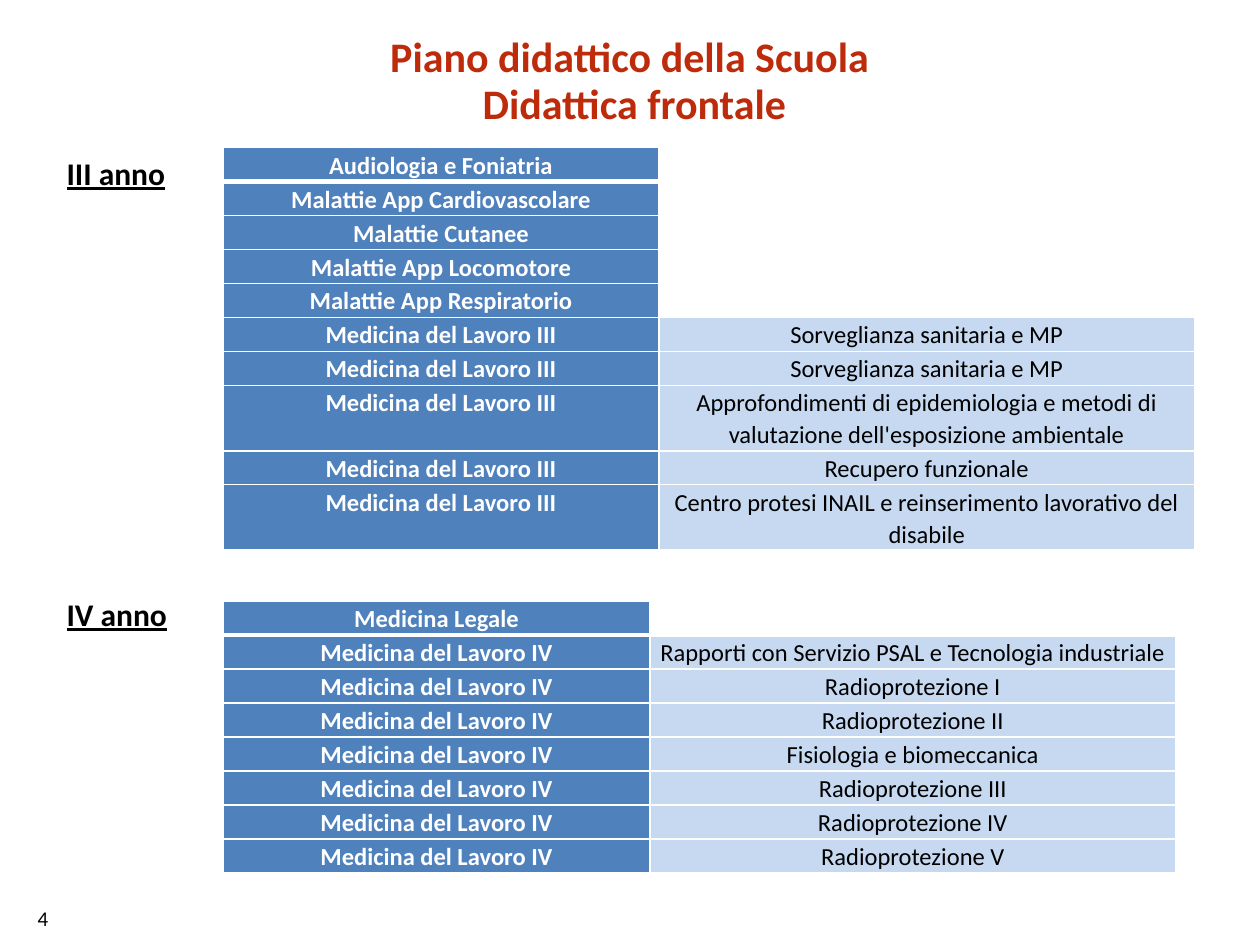
from dataclasses import dataclass

from lxml import etree
from pptx import Presentation
from pptx import util as u
from pptx.dml.color import RGBColor
from pptx.enum import text
from pptx.oxml.ns import qn


@dataclass(frozen=True)
class Theme:
    font: str = "Calibri"
    title: str = "BD2B0B"
    ink: str = "000000"
    paper: str = "FFFFFF"
    course: str = "4F81BD"
    topic: str = "C6D9F1"
    title_size: int = 24
    label_size: int = 18
    cell_size: int = 14
    number_size: int = 12


@dataclass(frozen=True)
class Year:
    label: str
    label_top: float
    table_top: float
    columns: tuple[float, float]
    rows: list[tuple[str, str]]
    tall_rows: tuple[int, ...] = ()


THEME = Theme()
LABEL_LEFT, TABLE_LEFT = 0.43, 1.77
ROW, TALL_ROW = 0.27, 0.52

YEARS = [
    Year("III anno", 1.17, 1.17, (3.46, 4.25), [
        ("Audiologia e Foniatria", ""),
        ("Malattie App Cardiovascolare", ""),
        ("Malattie Cutanee", ""),
        ("Malattie App Locomotore", ""),
        ("Malattie App Respiratorio", ""),
    ] + [("Medicina del Lavoro III", topic) for topic in (
        "Sorveglianza sanitaria e MP",
        "Sorveglianza sanitaria e MP",
        "Approfondimenti di epidemiologia e metodi di valutazione dell'esposizione ambientale",
        "Recupero funzionale",
        "Centro protesi INAIL e reinserimento lavorativo del disabile",
    )], tall_rows=(7, 9)),
    Year("IV anno", 4.67, 4.77, (3.39, 4.17), [("Medicina Legale", "")] + [
        ("Medicina del Lavoro IV", topic) for topic in (
            "Rapporti con Servizio PSAL e Tecnologia industriale",
            "Radioprotezione I",
            "Radioprotezione II",
            "Fisiologia e biomeccanica",
            "Radioprotezione III",
            "Radioprotezione IV",
            "Radioprotezione V",
        )]),
]


def style(p, size: int, color: str, bold: bool = False, underline: bool = False) -> None:
    f = p.font
    f.name, f.size, f.bold, f.underline = THEME.font, u.Pt(size), bold, underline
    f.color.rgb = RGBColor.from_string(color)


def add_text(slide, words: str, left: float, top: float, width: float, height: float,
             size: int, **look: bool) -> None:
    sp = slide.shapes.add_textbox(*map(u.Inches, (left, top, width, height)))
    sp.text_frame.word_wrap = True
    p = sp.text_frame.paragraphs[0]
    p.text = words
    style(p, size, THEME.ink, **look)


def set_borders(cell, bottom: float) -> None:
    """Draw white cell borders; they go ahead of the fill."""
    tc_pr = cell._tc.get_or_add_tcPr()
    widths = {"a:lnL": 1, "a:lnR": 1, "a:lnT": 1, "a:lnB": bottom}
    for i, (tag, width) in enumerate(widths.items()):
        ln = etree.Element(qn(tag), w=str(u.Pt(width)))
        fill = etree.SubElement(ln, qn("a:solidFill"))
        etree.SubElement(fill, qn("a:srgbClr"), val=THEME.paper)
        tc_pr.insert(i, ln)


def fill_cell(cell, words: str, fill: str, color: str, bold: bool, bottom: float) -> None:
    cell.margin_left = cell.margin_right = u.Inches(0.05)
    cell.margin_top = cell.margin_bottom = u.Inches(0.01)
    cell.fill.solid()
    cell.fill.fore_color.rgb = RGBColor.from_string(fill)
    set_borders(cell, bottom)
    p = cell.text_frame.paragraphs[0]
    p.text = words
    p.alignment, p.line_spacing = text.PP_ALIGN.CENTER, 1.07
    style(p, THEME.cell_size, color, bold)
    if not words:  # keeps an empty cell as low as its row
        etree.SubElement(p._p, qn("a:endParaRPr"), sz=str(THEME.cell_size * 100))


def add_year(slide, year: Year) -> None:
    add_text(slide, year.label, LABEL_LEFT, year.label_top, 1.3, 0.4,
             THEME.label_size, bold=True, underline=True)
    heights = [TALL_ROW if i in year.tall_rows else ROW for i in range(len(year.rows))]
    table = slide.shapes.add_table(
        len(heights), 2, u.Inches(TABLE_LEFT), u.Inches(year.table_top),
        u.Inches(sum(year.columns)), u.Inches(sum(heights))).table
    table.first_row = table.horz_banding = False
    for column, width in zip(table.columns, year.columns):
        column.width = u.Inches(width)
    for i, (course, topic) in enumerate(year.rows):
        table.rows[i].height = u.Inches(heights[i])
        bottom = 3 if i == 0 else 1
        fill_cell(table.cell(i, 0), course, THEME.course, THEME.paper, True, bottom)
        cell = table.cell(i, 1)
        fill_cell(cell, topic, THEME.topic if topic else THEME.paper, THEME.ink, False, bottom)
        cell.vertical_anchor = text.MSO_ANCHOR.BOTTOM


def add_title(slide, lines: list[str]) -> None:
    sp = slide.shapes.title
    sp.left, sp.top, sp.width, sp.height = map(u.Inches, (LABEL_LEFT, 0.29, 9.21, 0.71))
    tf = sp.text_frame
    tf.auto_size = text.MSO_AUTO_SIZE.NONE
    tf.vertical_anchor = text.MSO_ANCHOR.TOP
    tf.text = "\n".join(lines)
    for i, p in enumerate(tf.paragraphs):
        p.alignment, p.line_spacing = text.PP_ALIGN.CENTER, u.Pt(22)
        p.space_before = u.Pt(4.8 if i else 0)
        style(p, THEME.title_size, THEME.title, bold=True)


def main() -> None:
    prs = Presentation()
    prs.slide_width, prs.slide_height = u.Inches(10), u.Inches(7.5)
    slide = prs.slides.add_slide(prs.slide_layouts[5])

    # Title
    add_title(slide, ["Piano didattico della Scuola ", "Didattica frontale"])

    # One label and one table per year
    for year in YEARS:
        add_year(slide, year)

    # Slide number
    add_text(slide, "4", 0.2, 7.14, 0.87, 0.3, THEME.number_size)

    prs.save("out.pptx")


if __name__ == "__main__":
    main()
